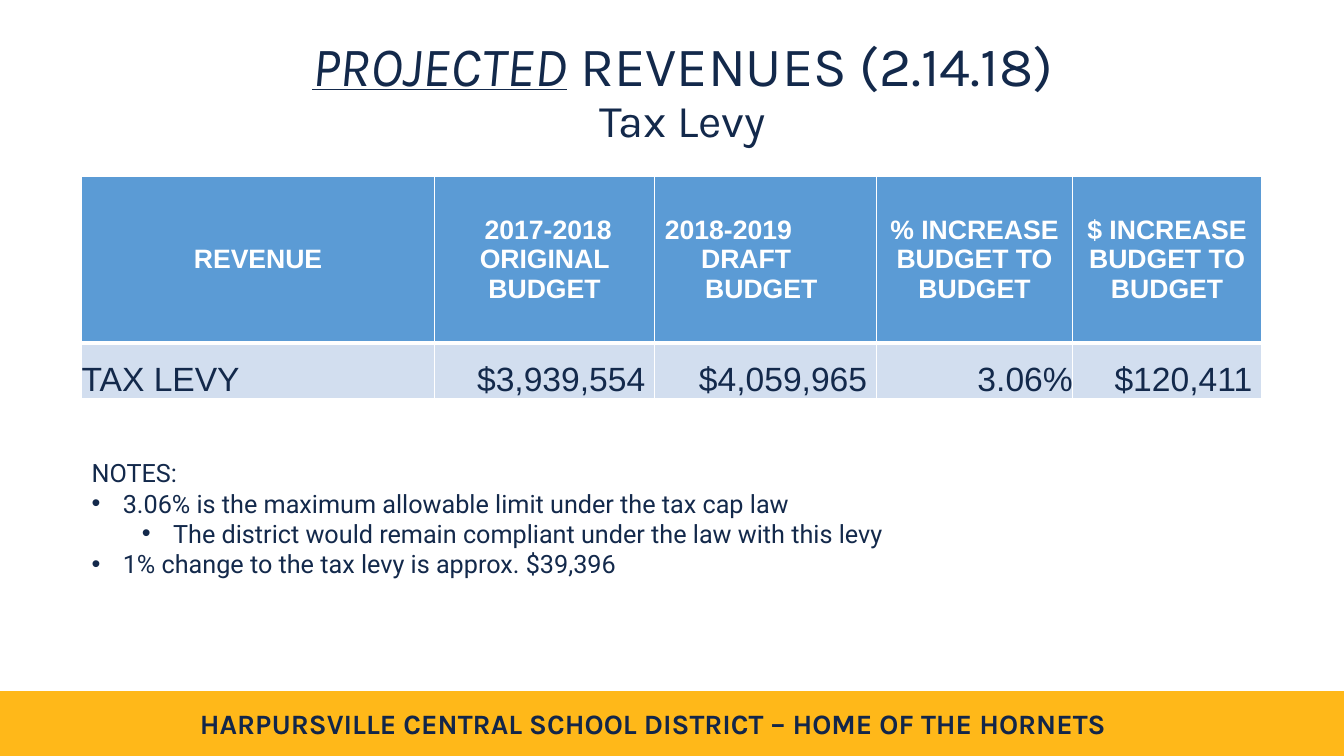
from lxml import etree
from pptx import Presentation
from pptx.dml.color import RGBColor
from pptx.enum.shapes import MSO_SHAPE as Shape
from pptx.enum.text import MSO_ANCHOR as Anchor, PP_ALIGN as Align
from pptx.oxml.ns import qn
from pptx.util import Emu, Inches, Pt

NAVY, GOLD, WHITE = "13294B", "FFB819", "FFFFFF"
HEAD_FILL, ROW_FILL = "5B9BD5", "D2DEEF"
W, H = 13.33, 7.5

# Each header is a list of (line, right indent in inches)
HEADERS = [
    [("REVENUE", 0)],
    [(" 2017-2018 ORIGINAL BUDGET", 0)],
    [("2018-2019", 0.73), ("DRAFT", 0.38), ("BUDGET", 0.08)],
    [("% INCREASE BUDGET TO BUDGET", 0)],
    [("$ INCREASE BUDGET TO BUDGET", 0)],
]
# Each value has its gap to the right edge of the cell
VALUES = [("TAX LEVY", 0), ("$3,939,554", 0.09), ("$4,059,965", 0.09),
          ("3.06%", 0), ("$120,411", 0.09)]
COLUMNS = [3.5, 2.18, 2.2, 1.95, 1.87]
ROWS = [1.65, 0.55]
NOTES = [
    ("NOTES:", None),
    ("3.06% is the maximum allowable limit under the tax cap law", 0),
    ("The district would remain compliant under the law with this levy", 1),
    ("1% change to the tax levy is approx. $39,396", 0),
]


def color(value):
    return RGBColor.from_string(value)


def paint(part, value):
    part.fill.solid()
    part.fill.fore_color.rgb = color(value)


def add_run(p, text, rgb=NAVY, **format_values):
    r = p.add_run()
    r.text = text
    r.font.color.rgb = color(rgb)
    for name, value in format_values.items():
        setattr(r.font, name, value)


def add_text_box(s, box, anchor=Anchor.TOP):
    sp = s.shapes.add_textbox(*map(Inches, box))
    tf = sp.text_frame
    tf.word_wrap = True
    tf.vertical_anchor = anchor
    return sp, tf


def next_paragraph(tf, i):
    return tf.add_paragraph() if i else tf.paragraphs[0]


def add_footer(s, box):
    x, y, w, h = box
    band = s.shapes.add_shape(Shape.RECTANGLE, *map(Inches, box))
    band.shadow.inherit = False
    paint(band, GOLD)
    band.line.color.rgb = color(GOLD)
    band.line.width = Pt(1)
    _, tf = add_text_box(s, (x + 0.132 * w, y + 0.1, 0.708 * w, 0.44))
    p = tf.paragraphs[0]
    p.alignment = Align.CENTER
    add_run(p, "HARPURSVILLE CENTRAL SCHOOL DISTRICT – HOME OF THE HORNETS",
            "132649", name="Karla", size=Pt(20), bold=True)


def add_title(s, box):
    sp, tf = add_text_box(s, box, Anchor.MIDDLE)
    paint(sp, WHITE)
    p = tf.paragraphs[0]
    p.alignment, p.line_spacing = Align.CENTER, 0.9
    big = {"name": "Karla", "size": Pt(39.6)}
    add_run(p, "PROJECTED", italic=True, underline=True, **big)
    add_run(p, " REVENUES (2.14.18)", **big)
    p.add_line_break()
    add_run(p, "Tax Levy", name="Karla", size=Pt(32.4))


def set_borders(cell, top, bottom):
    tc_pr = cell._tc.get_or_add_tcPr()
    sides = {"lnL": 1, "lnR": 1, "lnT": top, "lnB": bottom}
    for i, (tag, width) in enumerate(sides.items()):
        ln = etree.Element(qn("a:" + tag), w=str(Pt(width)))
        fill = etree.SubElement(ln, qn("a:solidFill"))
        etree.SubElement(fill, qn("a:srgbClr"), val=WHITE)
        tc_pr.insert(i, ln)


def style_cell(cell, fill, anchor, top, bottom, right=0):
    paint(cell, fill)
    set_borders(cell, top, bottom)
    cell.vertical_anchor = anchor
    cell.margin_left = cell.margin_top = cell.margin_bottom = Emu(0)
    cell.margin_right = Inches(right)


def add_levy_table(s, x, y):
    frame = s.shapes.add_table(len(ROWS), len(COLUMNS), Inches(x), Inches(y),
                               Inches(sum(COLUMNS)), Inches(sum(ROWS)))
    table = frame.table
    for column, width in zip(table.columns, COLUMNS):
        column.width = Inches(width)
    for row, height in zip(table.rows, ROWS):
        row.height = Inches(height)

    for c, (lines, (value, gap)) in enumerate(zip(HEADERS, VALUES)):
        # Header cell
        cell = table.cell(0, c)
        style_cell(cell, HEAD_FILL, Anchor.MIDDLE, 1, 3)
        for i, (text, indent) in enumerate(lines):
            p = next_paragraph(cell.text_frame, i)
            p.alignment = Align.CENTER
            if indent:
                p._p.get_or_add_pPr().set("marR", str(Inches(indent)))
            add_run(p, text, WHITE, name="Arial", size=Pt(19), bold=True)

        # Value cell
        cell = table.cell(1, c)
        style_cell(cell, ROW_FILL, Anchor.BOTTOM, 3, 1, gap)
        p = cell.text_frame.paragraphs[0]
        p.alignment = Align.RIGHT if c else Align.LEFT
        add_run(p, value, name="Arial", size=Pt(24), bold=False)


def add_notes(s, box):
    _, tf = add_text_box(s, box)
    for i, (text, level) in enumerate(NOTES):
        p = next_paragraph(tf, i)
        if level is not None:
            p.level = level
            p_pr = p._p.get_or_add_pPr()
            p_pr.set("marL", str(Inches(0.31 + 0.5 * level)))
            p_pr.set("indent", str(Inches(-0.31)))
            etree.SubElement(p_pr, qn("a:buFont"), typeface="Arial")
            etree.SubElement(p_pr, qn("a:buChar"), char="•")
        add_run(p, text, name="Roboto", size=Pt(18))


def main():
    prs = Presentation()
    prs.slide_width, prs.slide_height = Inches(W), Inches(H)
    s = prs.slides.add_slide(prs.slide_layouts[6])
    add_footer(s, (0, 6.86, W, 0.63))
    add_title(s, (1.02, 0.4, 11.5, 1.04))
    add_levy_table(s, 0.81, 1.75)
    add_notes(s, (0.81, 4.49, 9.88, 1.31))
    prs.save("out.pptx")


if __name__ == "__main__":
    main()
